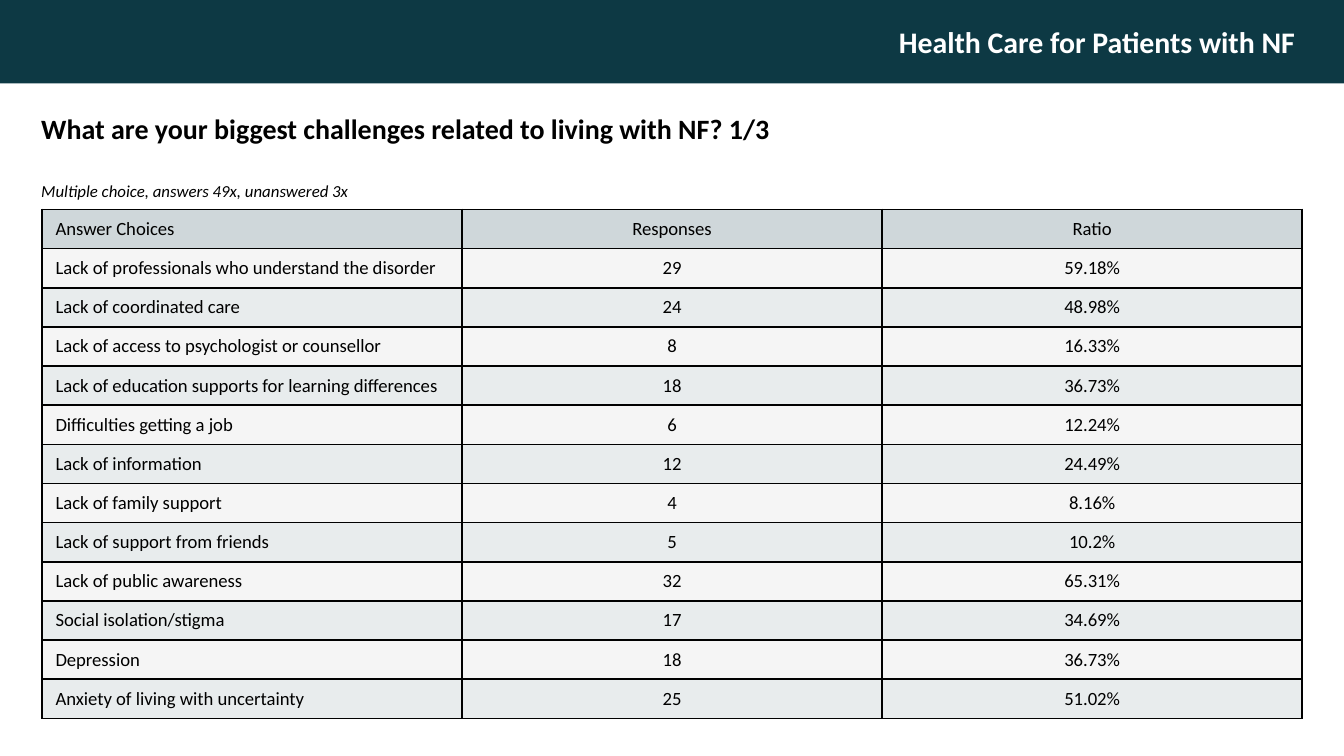
from typing import NamedTuple

from lxml import etree
from pptx import Presentation
from pptx.dml.color import RGBColor
from pptx.enum.shapes import MSO_SHAPE
from pptx.enum.text import MSO_ANCHOR, PP_ALIGN
from pptx.oxml.ns import qn
from pptx.util import Cm, Pt

RECTANGLE = MSO_SHAPE.RECTANGLE
TOP, MIDDLE = MSO_ANCHOR.TOP, MSO_ANCHOR.MIDDLE
LEFT, CENTER, RIGHT = PP_ALIGN.LEFT, PP_ALIGN.CENTER, PP_ALIGN.RIGHT

FONT = "Calibri"
BLACK, WHITE, TEAL = "000000", "FFFFFF", "0D3944"
HEADER_FILL = "CFD7DA"
BAND_FILLS = ("F5F5F5", "E8ECED")

PAGE_WIDTH, PAGE_HEIGHT = 25.4, 14.29
TEXT_LEFT = 0.53
TABLE_LEFT, TABLE_TOP = 0.79, 3.96
COLUMN_WIDTH, ROW_HEIGHT = 7.94, 0.74
CELL_INDENT = 0.13


class Answer(NamedTuple):
    choice: str
    responses: str
    ratio: str


HEADINGS = Answer("Answer Choices", "Responses", "Ratio")
ANSWERS = [
    Answer("Lack of professionals who understand the disorder", "29", "59.18%"),
    Answer("Lack of coordinated care", "24", "48.98%"),
    Answer("Lack of access to psychologist or counsellor", "8", "16.33%"),
    Answer("Lack of education supports for learning differences", "18", "36.73%"),
    Answer("Difficulties getting a job", "6", "12.24%"),
    Answer("Lack of information", "12", "24.49%"),
    Answer("Lack of family support", "4", "8.16%"),
    Answer("Lack of support from friends", "5", "10.2%"),
    Answer("Lack of public awareness", "32", "65.31%"),
    Answer("Social isolation/stigma", "17", "34.69%"),
    Answer("Depression", "18", "36.73%"),
    Answer("Anxiety of living with uncertainty", "25", "51.02%"),
]


def color(value: str) -> RGBColor:
    return RGBColor.from_string(value)


def write(frame, text: str, *, size: float, fill: str = BLACK, bold: bool = False,
          italic: bool = False, align: PP_ALIGN = LEFT, indent: float = 0) -> None:
    """Put one formatted paragraph into a text frame; indent is in cm."""
    para = frame.paragraphs[0]
    para.alignment = align
    if indent:
        para._p.get_or_add_pPr().set("marL", str(Cm(indent)))
    span = para.add_run()
    span.text = text
    font = span.font
    font.name, font.size, font.bold, font.italic = FONT, Pt(size), bold, italic
    font.color.rgb = color(fill)


def add_banner(page, text: str) -> None:
    banner = page.shapes.add_shape(RECTANGLE, 0, 0, Cm(PAGE_WIDTH), Cm(1.58))
    banner.shadow.inherit = False
    banner.fill.solid()
    banner.fill.fore_color.rgb = color(TEAL)
    banner.line.fill.background()
    banner.text_frame.vertical_anchor = MIDDLE
    banner.text_frame.margin_right = Cm(0.92)
    write(banner.text_frame, text, size=16, fill=WHITE, bold=True, align=RIGHT)


def add_text(page, text: str, top: float, width: float, height: float, **style) -> None:
    box = page.shapes.add_textbox(Cm(TEXT_LEFT), Cm(top), Cm(width), Cm(height))
    box.text_frame.word_wrap = True
    box.text_frame.vertical_anchor = TOP
    write(box.text_frame, text, **style)


def add_borders(cell) -> None:
    """Draw a 1 pt line on all sides; call before the cell is filled."""
    properties = cell._tc.get_or_add_tcPr()
    for side in ("a:lnL", "a:lnR", "a:lnT", "a:lnB"):
        line = etree.SubElement(properties, qn(side), w=str(Pt(1)))
        line_fill = etree.SubElement(line, qn("a:solidFill"))
        etree.SubElement(line_fill, qn("a:srgbClr"), val=BLACK)


def fill_cell(cell, text: str, fill: str, is_choice: bool) -> None:
    cell.margin_left = Cm(CELL_INDENT if is_choice else 0)
    cell.margin_right = cell.margin_top = cell.margin_bottom = 0
    cell.vertical_anchor = MIDDLE
    add_borders(cell)
    cell.fill.solid()
    cell.fill.fore_color.rgb = color(fill)
    write(cell.text_frame, text, size=10, align=LEFT if is_choice else CENTER,
          indent=CELL_INDENT if is_choice else 0)


def add_answer_table(page, answers: list[Answer]) -> None:
    rows = [HEADINGS, *answers]
    columns = len(HEADINGS)
    table = page.shapes.add_table(
        len(rows), columns, Cm(TABLE_LEFT), Cm(TABLE_TOP),
        Cm(COLUMN_WIDTH * columns), Cm(ROW_HEIGHT * len(rows))).table
    table.first_row = table.horz_banding = False
    for column in table.columns:
        column.width = Cm(COLUMN_WIDTH)
    for index, answer in enumerate(rows):
        table.rows[index].height = Cm(ROW_HEIGHT)
        fill = BAND_FILLS[(index - 1) % 2] if index else HEADER_FILL
        for position, text in enumerate(answer):
            fill_cell(table.cell(index, position), text, fill, position == 0)


def main() -> None:
    deck = Presentation()
    deck.slide_width, deck.slide_height = Cm(PAGE_WIDTH), Cm(PAGE_HEIGHT)
    page = deck.slides.add_slide(deck.slide_layouts[6])
    add_banner(page, "Health Care for Patients with NF")
    add_text(page, "Multiple choice, answers 49x, unanswered 3x",
             3.3, 10.59, 1.58, size=9, italic=True)
    add_answer_table(page, ANSWERS)
    add_text(page, "What are your biggest challenges related to living with NF? 1/3",
             1.98, 24.33, 1.32, size=15, bold=True)
    deck.save("out.pptx")


if __name__ == "__main__":
    main()
